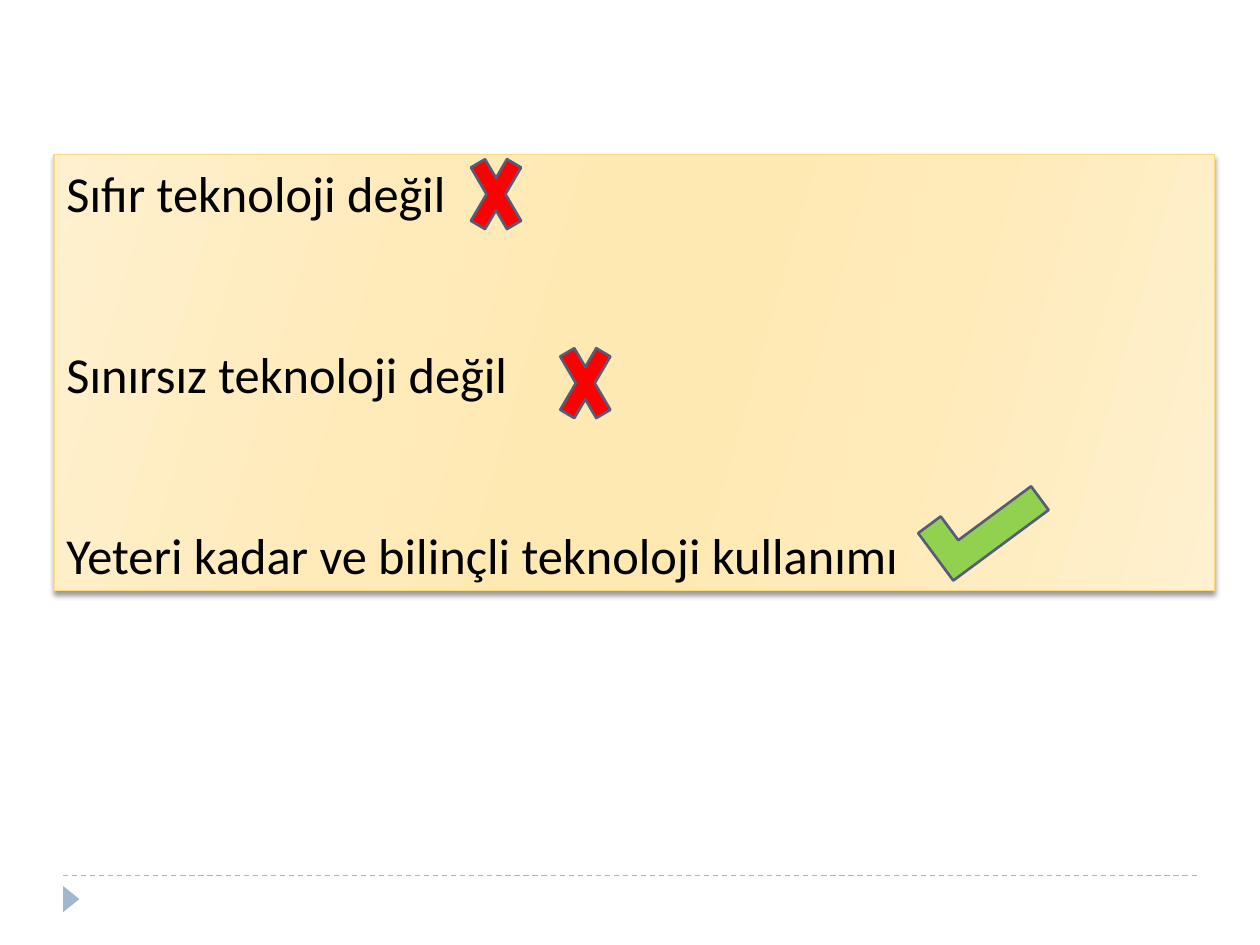
from lxml import etree
from pptx import Presentation
from pptx.dml.color import RGBColor
from pptx.enum.dml import MSO_LINE
from pptx.enum.shapes import MSO_CONNECTOR, MSO_SHAPE
from pptx.enum.text import MSO_ANCHOR, PP_ALIGN
from pptx.oxml.ns import qn
from pptx.util import Cm, Pt

DASH = MSO_LINE.DASH
STRAIGHT = MSO_CONNECTOR.STRAIGHT
RECT = MSO_SHAPE.RECTANGLE
CROSS = MSO_SHAPE.MATH_MULTIPLY
CORNER = MSO_SHAPE.CORNER
ARROW = MSO_SHAPE.ISOSCELES_TRIANGLE
BOTTOM = MSO_ANCHOR.BOTTOM
LEFT = PP_ALIGN.LEFT

COLORS = {
    "rule": "9FB8CD", "edge": "FADA7A", "mark": "545C79",
    "no": "FF0000", "yes": "92D050", "text": "000000",
    "pale": "FFF0CF", "mid": "FFEBBA", "deep": "FFE9B3",
}
STOPS = [(0, "pale"), (30, "mid"), (45, "deep"),
         (55, "deep"), (73, "mid"), (100, "pale")]
LINES = ["Sıfır teknoloji değil", "Sınırsız teknoloji değil",
         "Yeteri kadar ve bilinçli teknoloji kullanımı"]


def color(name):
    return RGBColor.from_string(COLORS[name])


def add(kind, left, top, width, height, fill=None, edge=None, weight=1.5):
    shape = slide.shapes.add_shape(kind, Cm(left), Cm(top), Cm(width), Cm(height))
    shape.shadow.inherit = False
    if fill:
        shape.fill.solid()
        shape.fill.fore_color.rgb = color(fill)
    if edge:
        shape.line.color.rgb = color(edge)
        shape.line.width = Pt(weight)
    else:
        shape.line.fill.background()
    return shape


prs = Presentation()
prs.slide_width, prs.slide_height = Cm(25.4), Cm(19.05)
slide = prs.slides.add_slide(prs.slide_layouts[6])

rule = slide.shapes.add_connector(STRAIGHT, Cm(1.27), Cm(17.65), Cm(24.13), Cm(17.65))
rule.line.color.rgb = color("rule")
rule.line.width = Pt(0.75)
rule.line.dash_style = DASH
etree.SubElement(rule._element.spPr, qn("a:effectLst"))

arrow = add(ARROW, 1.17, 17.96, 0.53, 0.33, "rule")
arrow.rotation = 90

box = add(RECT, 1.09, 3.12, 23.39, 8.79, edge="edge", weight=0.75)
box.fill.gradient()
box.fill.gradient_angle = 344
props = box._element.spPr
stops = props.find(".//" + qn("a:gsLst"))
for old in list(stops):
    stops.remove(old)
for place, name in STOPS:
    stop = etree.SubElement(stops, qn("a:gs"), pos=str(place * 1000))
    etree.SubElement(stop, qn("a:srgbClr"), val=COLORS[name])
shade = etree.SubElement(
    props.find(qn("a:effectLst")), qn("a:outerShdw"), blurRad=str(Pt(3)),
    dist=str(Pt(2)), dir="5400000", rotWithShape="0")
tint = etree.SubElement(shade, qn("a:srgbClr"), val=COLORS["text"])
etree.SubElement(tint, qn("a:alpha"), val="40000")

frame = box.text_frame
frame.word_wrap = True
frame.vertical_anchor = BOTTOM
frame.text = "\n".join(LINES)
for i, para in enumerate(frame.paragraphs):
    para.alignment = LEFT
    para.space_before = Pt(69 if i else 0)
    font = para.runs[0].font
    font.name, font.size = "Calibri", Pt(28.8)
    font.color.rgb = color("text")

for left, top in [(9.3, 2.72), (11.1, 6.53)]:
    add(CROSS, left, top, 1.4, 2.39, "no", "mark")

check = add(CORNER, 19.23, 9.32, 1.19, 2.39, "yes", "mark")
check.adjustments[0] = 0.474
check.adjustments[1] = 0.5
check.rotation = 53.5
check._element.spPr.xfrm.set("flipH", "1")

prs.save("out.pptx")
